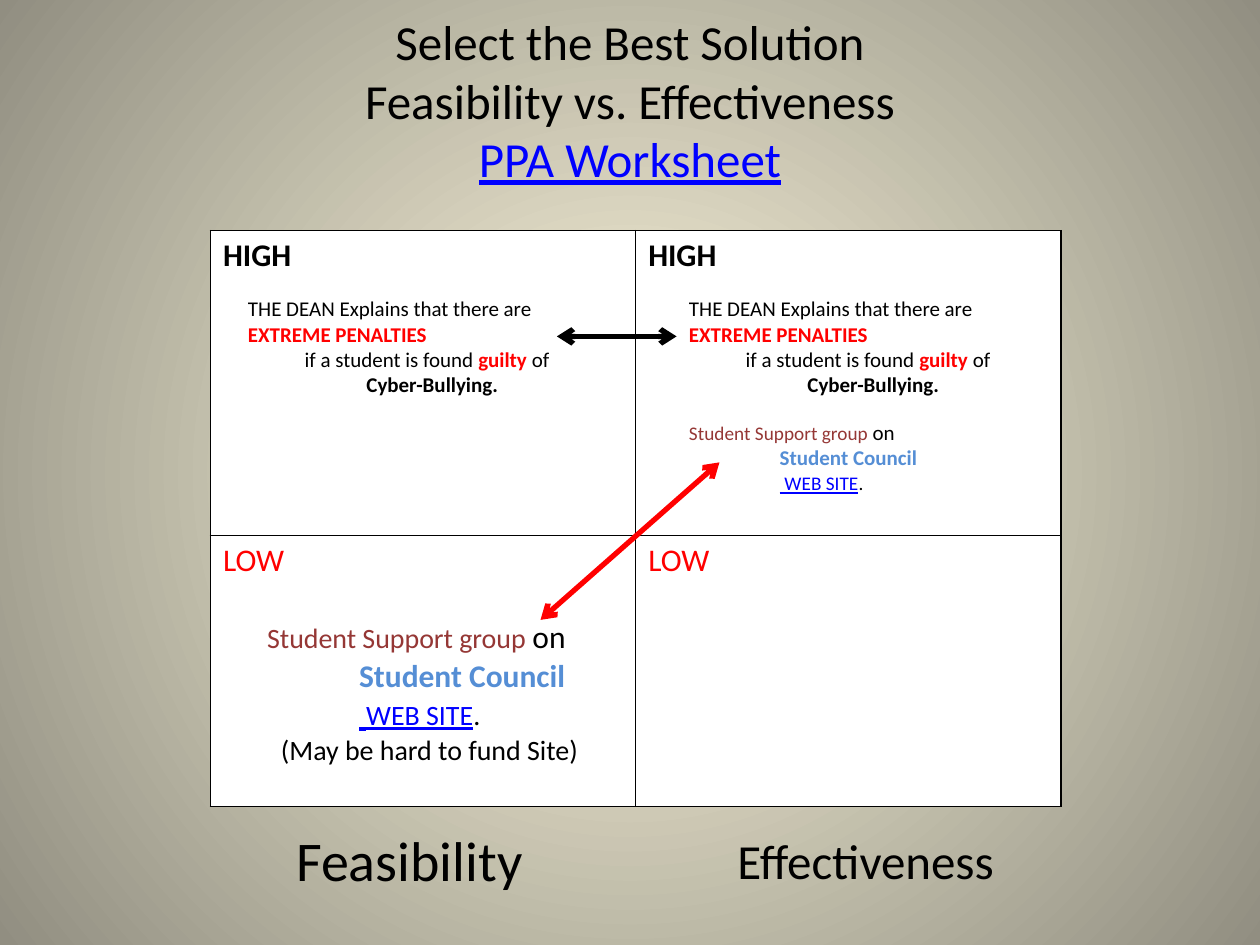
from copy import deepcopy
from dataclasses import dataclass

from lxml.etree import SubElement
from pptx import Presentation
from pptx.dml.color import RGBColor
from pptx.enum.shapes import MSO_CONNECTOR
from pptx.enum.text import MSO_ANCHOR, MSO_AUTO_SIZE, PP_ALIGN
from pptx.oxml.ns import qn
from pptx.util import Inches, Pt

BLACK, WHITE, RED, LINK = "000000", "FFFFFF", "FF0000", "0000FF"
MAROON, BLUE = "953735", "558ED5"


@dataclass
class Run:
    text: str
    size: float
    color: str = BLACK
    bold: bool = False
    underline: bool = False


@dataclass
class Line:
    runs: list[Run]
    indent: float = 0
    before: float = 0


@dataclass
class Arrow:
    start: tuple[float, float]
    end: tuple[float, float]
    color: str


def rgb(color: str) -> RGBColor:
    return RGBColor.from_string(color)


def add_run(paragraph, run: Run) -> None:
    """Add a run, turning each newline into a line break of the same size."""
    for number, part in enumerate(run.text.split("\n")):
        if number:
            paragraph.add_line_break()
            line_break = paragraph._p.findall(qn("a:br"))[-1]
            line_break.append(deepcopy(piece.font._element))
        if not part:
            continue
        piece = paragraph.add_run()
        piece.text = part
        font = piece.font
        font.name, font.size = "Calibri", Pt(run.size)
        font.bold, font.underline = run.bold, run.underline
        font.color.rgb = rgb(run.color)


def write_text(frame, lines: list[Line], *, align=PP_ALIGN.LEFT, anchor=MSO_ANCHOR.TOP) -> None:
    frame.word_wrap = True
    frame.vertical_anchor = anchor
    for number, line in enumerate(lines):
        paragraph = frame.add_paragraph() if number else frame.paragraphs[0]
        paragraph.alignment = align
        paragraph.space_before = Pt(line.before)
        if line.indent:
            properties = paragraph._p.get_or_add_pPr()
            properties.set("marL", str(Inches(line.indent)))
            properties.set("indent", "0")
        for run in line.runs:
            add_run(paragraph, run)


def add_text(slide, left: float, top: float, width: float, height: float,
             lines: list[Line], **text_format) -> None:
    box = slide.shapes.add_textbox(Inches(left), Inches(top), Inches(width), Inches(height))
    write_text(box.text_frame, lines, **text_format)


def set_borders(cell) -> None:
    properties = cell._tc.get_or_add_tcPr()
    for position, side in enumerate(("lnL", "lnR", "lnT", "lnB")):
        border = SubElement(properties, qn(f"a:{side}"), w=str(Pt(1)))
        fill = SubElement(border, qn("a:solidFill"))
        SubElement(fill, qn("a:srgbClr"), val=BLACK)
        properties.insert(position, border)


def add_arrow(slide, arrow: Arrow) -> None:
    points = [Inches(value) for value in (*arrow.start, *arrow.end)]
    connector = slide.shapes.add_connector(MSO_CONNECTOR.STRAIGHT, *points)
    connector.line.color.rgb = rgb(arrow.color)
    connector.line.width = Pt(3)
    outline = connector.line._get_or_add_ln()
    for end in ("headEnd", "tailEnd"):
        SubElement(outline, qn(f"a:{end}"), type="arrow")
    SubElement(connector._element.spPr, qn("a:effectLst"))


def paint_background(slide) -> None:
    fill = slide.background.fill
    fill.gradient()
    for stop, color, position in zip(fill.gradient_stops, ("FCF7DD", "918E81"), (0, 1)):
        stop.color.rgb = rgb(color)
        stop.position = position
    gradient = slide._element.find(".//" + qn("a:gradFill"))
    gradient.remove(gradient.find(qn("a:lin")))
    circle = SubElement(gradient, qn("a:path"), path="circle")
    SubElement(circle, qn("a:fillToRect"), l="50000", t="50000", r="50000", b="50000")


def dean_lines() -> list[Line]:
    return [
        Line([Run("THE DEAN Explains that there are\n", 12),
              Run("EXTREME PENALTIES", 12, RED, bold=True)]),
        Line([Run("if a student is found ", 12), Run("guilty", 12, RED, bold=True),
              Run(" of", 12)], indent=0.45),
        Line([Run("Cyber-Bullying.", 12, bold=True)], indent=0.94),
    ]


def support_lines(small: float, large: float, indent: float, council_indent: float,
                  before: float) -> list[Line]:
    return [
        Line([Run("Student Support group ", small, MAROON), Run("on", large)], indent, before),
        Line([Run("Student Council", large, BLUE, bold=True)], council_indent),
        Line([Run(" ", large, LINK, bold=True, underline=True),
              Run("WEB SITE", small, LINK, underline=True), Run(".", small)], council_indent),
    ]


def main() -> None:
    presentation = Presentation()
    presentation.slide_width, presentation.slide_height = Inches(10), Inches(7.5)
    slide = presentation.slides.add_slide(presentation.slide_layouts[5])
    paint_background(slide)

    # Title
    title = slide.shapes.title
    title.left, title.top, title.width, title.height = map(Inches, (0.5, 0, 9, 1.58))
    heading = [Run("Select the Best Solution\nFeasibility vs. Effectiveness\n", 28),
               Run("PPA Worksheet", 28, LINK, underline=True)]
    write_text(title.text_frame, [Line(heading)], align=PP_ALIGN.CENTER, anchor=MSO_ANCHOR.MIDDLE)
    title.text_frame.auto_size = MSO_AUTO_SIZE.NONE

    # High and low grid
    grid = slide.shapes.add_table(2, 2, Inches(1.67), Inches(1.83), Inches(6.75), Inches(4.57)).table
    for row, height in zip(grid.rows, (2.42, 2.15)):
        row.height = Inches(height)
    high = Line([Run("HIGH", 18, bold=True)])
    low = Line([Run("LOW", 18, RED)])
    low_feasibility = [low, *support_lines(16, 18, 0.35, 1.08, 22),
                       Line([Run("(May be hard to fund Site)", 16)], indent=0.46)]
    for cell, lines in zip(grid.iter_cells(), ([high], [high], low_feasibility, [low])):
        cell.fill.solid()
        cell.fill.fore_color.rgb = rgb(WHITE)
        set_borders(cell)
        write_text(cell.text_frame, lines)

    # Column captions
    add_text(slide, 1.92, 6.5, 2.66, 0.64, [Line([Run("Feasibility", 32)])], align=PP_ALIGN.CENTER)
    add_text(slide, 5.33, 6.54, 3.08, 0.57, [Line([Run("Effectiveness", 28)])],
             align=PP_ALIGN.CENTER)

    # Solutions rated high
    add_text(slide, 1.87, 2.3, 2.7, 0.91, dean_lines())
    add_text(slide, 5.37, 2.3, 2.7, 1.9, dean_lines() + support_lines(11, 12, 0, 0.72, 13))

    # Arrows joining the two ratings of each solution
    for arrow in (Arrow((4.42, 2.67), (5.37, 2.67), BLACK),
                  Arrow((4.29, 4.92), (5.71, 3.67), RED)):
        add_arrow(slide, arrow)

    presentation.save("out.pptx")


if __name__ == "__main__":
    main()
